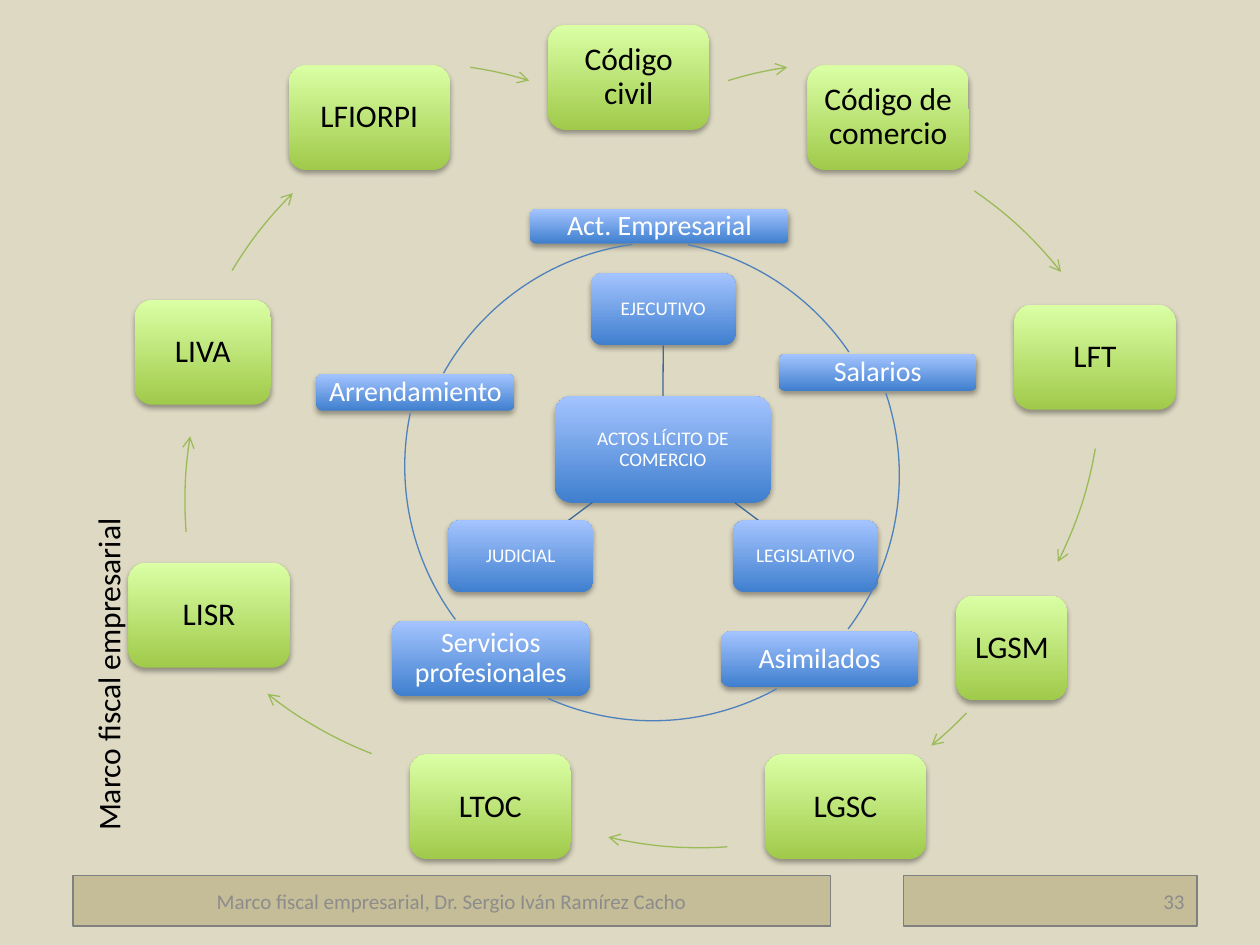
"""Build the slide that relates lawful acts of commerce, taxable activities and the tax laws."""
from dataclasses import dataclass

import lxml.etree
import pptx
import pptx.dml.color
import pptx.enum.shapes
import pptx.enum.text
import pptx.oxml.ns
import pptx.util

Cm = pptx.util.Cm
SHAPES = pptx.enum.shapes.MSO_SHAPE
ALIGN = pptx.enum.text.PP_ALIGN
ANCHOR = pptx.enum.text.MSO_ANCHOR
qn = pptx.oxml.ns.qn


@dataclass(frozen=True)
class Theme:
    font: str = "Calibri"
    background: str = "DDD9C3"
    bar: str = "C4BD97"
    bar_line: str = "808080"
    bar_text: str = "8C8C8C"
    dark: str = "000000"
    light: str = "FFFFFF"
    blue: tuple = ("3F7FCE", "A4C4FF")
    green: tuple = ("A0CA4A", "DAFFA5")
    spoke: str = "3F6797"
    activity_arc: str = "4F81BD"
    law_arc: str = "9BBB59"
    large: int = 18
    medium: int = 16
    small: int = 12
    tiny: int = 11
    line_width: float = 0.75


THEME = Theme()

LAWS = [
    ("Código civil", 11.05, 0.51, 3.25),
    ("Código de comercio", 16.28, 1.32, 3.25),
    ("LFT", 20.45, 6.15, 3.25),
    ("LGSM", 19.28, 12.01, 2.24),
    ("LGSC", 15.42, 15.21, 3.25),
    ("LTOC", 8.26, 15.21, 3.25),
    ("LISR", 2.59, 11.35, 3.25),
    ("LIVA", 2.72, 6.05, 2.74),
    ("LFIORPI", 5.82, 1.32, 3.25),
]
LAW_ARCS = [
    (17.06, 9.41, 253, 261.6),
    (15.02, 10.55, 304.6, 321.5),
    (14.06, 7.66, 9.8, 26.8),
    (13.6, 8.75, 43.7, 50.5),
    (14.11, 8.95, 86.1, 103.1),
    (10.45, 7.61, 111.3, 128.4),
    (11.87, 10.1, 175.6, 189.2),
    (11.65, 9.66, 211.1, 225.1),
    (8.29, 9.41, 278.4, 287),
]
ACTIVITIES = [
    ("Act. Empresarial", 10.69, 4.22, 5.21, 0.69),
    ("Salarios", 15.7, 7.14, 3.99, 0.74),
    ("Asimilados", 14.53, 12.73, 3.99, 1.12),
    ("Servicios profesionales", 7.9, 12.52, 3.99, 1.52),
    ("Arrendamiento", 6.38, 7.54, 3.99, 0.74),
]
ACTIVITY_ARCS = [
    (12.83, 10.01, 281.6, 325.8),
    (12.95, 9.58, 341.4, 36.8),
    (13.16, 9.35, 61.2, 114),
    (13.34, 9.4, 143.4, 191.9),
    (13.46, 10.06, 209.3, 262.1),
]


def rgb(value):
    return pptx.dml.color.RGBColor.from_string(value)


def write_text(frame, text, *, size, color, align=ALIGN.CENTER, anchor=ANCHOR.MIDDLE,
               spacing=1.0, inset=None):
    frame.word_wrap = True
    frame.vertical_anchor = anchor
    if inset is not None:
        frame.margin_left = frame.margin_right = Cm(inset)
        frame.margin_top = frame.margin_bottom = Cm(inset)
    para = frame.paragraphs[0]
    para.alignment = align
    para.line_spacing = spacing
    span = para.add_run()
    span.text = text
    span.font.name = THEME.font
    span.font.size = pptx.util.Pt(size)
    span.font.color.rgb = rgb(color)


class Builder:
    def __init__(self, deck, theme):
        self.theme = theme
        self.page = deck.slides.add_slide(deck.slide_layouts[5])
        fill = self.page.background.fill
        fill.solid()
        fill.fore_color.rgb = rgb(theme.background)

    def shape(self, kind, left, top, width, height):
        shape = self.page.shapes.add_shape(kind, Cm(left), Cm(top), Cm(width), Cm(height))
        shape.shadow.inherit = False
        return shape

    def outline(self, line, color):
        line.color.rgb = rgb(color)
        line.width = pptx.util.Pt(self.theme.line_width)

    def side_title(self, text):
        title = self.page.shapes.title
        title.left, title.top, title.width, title.height = Cm(-4.11), Cm(10.21), Cm(12.57), Cm(1.02)
        title.rotation = 270
        title.text_frame.auto_size = pptx.enum.text.MSO_AUTO_SIZE.NONE
        write_text(title.text_frame, text, size=self.theme.large, color=self.theme.dark,
                   align=ALIGN.LEFT, anchor=ANCHOR.TOP)

    def bar(self, text, left, width, align):
        bar = self.shape(SHAPES.RECTANGLE, left, 17.65, width, 1.02)
        bar.fill.solid()
        bar.fill.fore_color.rgb = rgb(self.theme.bar)
        self.outline(bar.line, self.theme.bar_line)
        write_text(bar.text_frame, text, size=self.theme.small, color=self.theme.bar_text,
                   align=align)

    def node(self, text, left, top, width, height, *, colors, size, color, inset=0.18):
        box = self.shape(SHAPES.ROUNDED_RECTANGLE, left, top, width, height)
        box.fill.gradient()
        box.fill.gradient_angle = 90
        for stop, position, shade in zip(box.fill.gradient_stops, (0, 1), colors):
            stop.position = position
            stop.color.rgb = rgb(shade)
        box.line.fill.background()
        effects = box.element.spPr.find(qn("a:effectLst"))
        shadow = lxml.etree.SubElement(effects, qn("a:outerShdw"), blurRad="40000",
                                       dist="23000", dir="5400000", rotWithShape="0")
        black = lxml.etree.SubElement(shadow, qn("a:srgbClr"), val=self.theme.dark)
        lxml.etree.SubElement(black, qn("a:alpha"), val="35000")
        write_text(box.text_frame, text, size=size, color=color, spacing=0.9, inset=inset)
        return box

    def arc(self, center_x, center_y, start, end, *, diameter, color, arrow=False):
        radius = diameter / 2
        arc = self.shape(SHAPES.ARC, center_x - radius, center_y - radius, diameter, diameter)
        for index, angle in enumerate((start, end)):
            arc.adjustments[index] = angle * 0.6
        arc.fill.background()
        self.outline(arc.line, color)
        if arrow:
            line = arc.element.spPr.find(qn("a:ln"))
            lxml.etree.SubElement(line, qn("a:tailEnd"), type="arrow")

    def spoke(self, start=(0, 0), end=(0, 0)):
        spoke = self.page.shapes.add_connector(
            pptx.enum.shapes.MSO_CONNECTOR.STRAIGHT, *map(Cm, start + end))
        self.outline(spoke.line, self.theme.spoke)
        lxml.etree.SubElement(spoke.element.spPr, qn("a:effectLst"))
        return spoke


def main():
    deck = pptx.Presentation()
    deck.slide_width, deck.slide_height = Cm(25.4), Cm(19.05)
    builder = Builder(deck, THEME)
    builder.side_title("Marco fiscal empresarial")

    power = dict(colors=THEME.blue, size=THEME.tiny, color=THEME.light, inset=0.08)
    core = builder.node("ACTOS LÍCITO DE COMERCIO", 11.18, 7.98, 4.37, 2.16, **power)
    executive = builder.node("EJECUTIVO", 11.91, 5.51, 2.92, 1.45, **power)
    upright = builder.spoke()
    upright.begin_connect(core, 0)
    upright.end_connect(executive, 2)
    builder.spoke((14.81, 10.13), (15.29, 10.49))
    builder.node("LEGISLATIVO", 14.78, 10.49, 2.92, 1.45, **power)
    builder.spoke((11.94, 10.13), (11.46, 10.49))
    builder.node("JUDICIAL", 9.04, 10.49, 2.92, 1.45, **power)

    for text, left, top, width in LAWS:
        builder.node(text, left, top, width, 2.11, colors=THEME.green,
                     size=THEME.large, color=THEME.dark)
    for arc in LAW_ARCS:
        builder.arc(*arc, diameter=16.28, color=THEME.law_arc, arrow=True)

    builder.bar("33", 18.21, 5.92, ALIGN.RIGHT)
    builder.bar("Marco fiscal empresarial, Dr. Sergio Iván Ramírez Cacho", 1.47, 15.27, ALIGN.CENTER)

    for activity in ACTIVITIES:
        builder.node(*activity, colors=THEME.blue, size=THEME.medium, color=THEME.light)
    for arc in ACTIVITY_ARCS:
        builder.arc(*arc, diameter=10.36, color=THEME.activity_arc)

    deck.save("out.pptx")


if __name__ == "__main__":
    main()
